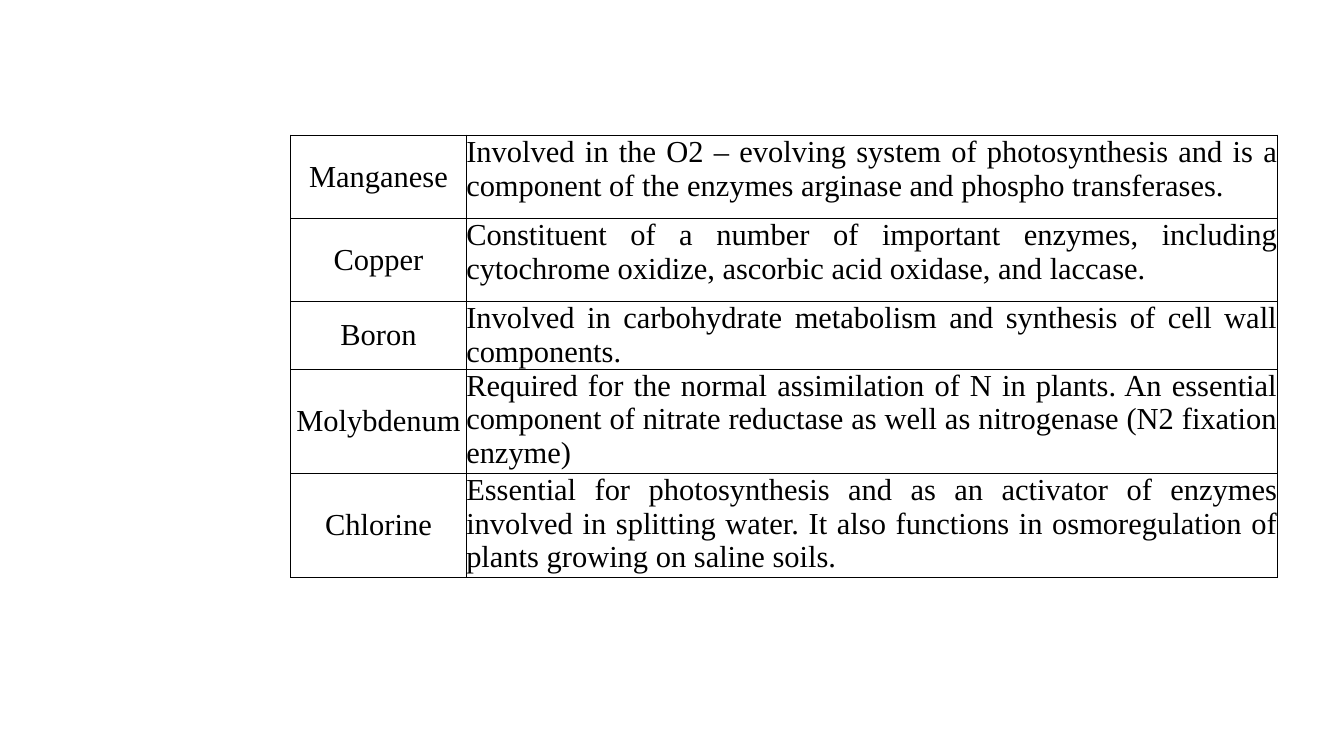
"""Build a slide with a table of micronutrients and their roles in plants."""
import pptx
import pptx.dml.color
import pptx.enum.text
import pptx.oxml
import pptx.oxml.ns
import pptx.util
from pptx.util import Inches

NUTRIENTS = [
    ("Manganese", "Involved in the O2 – evolving system of photosynthesis and is a "
     "component of the enzymes arginase and phospho transferases.", 0.91),
    ("Copper", "Constituent of a number of important enzymes, including "
     "cytochrome oxidize, ascorbic acid oxidase, and laccase.", 0.91),
    ("Boron", "Involved in carbohydrate metabolism and synthesis of cell wall "
     "components.", 0.68),
    ("Molybdenum", "Required for the normal assimilation of N in plants. An essential "
     "component of nitrate reductase as well as nitrogenase (N2 fixation enzyme)", 1.14),
    ("Chlorine", "Essential for photosynthesis and as an activator of enzymes "
     "involved in splitting water. It also functions in osmoregulation of "
     "plants growing on saline soils.", 1.14),
]
COLUMN_WIDTHS = (1.92, 8.87)
LEFT, TOP = 3.18, 1.48
INK = "000000"
FONT, FONT_SIZE = "Times New Roman", 24


def color(value):
    return pptx.dml.color.RGBColor.from_string(value)


def add_borders(cell):
    properties = cell._tc.get_or_add_tcPr()
    for position, side in enumerate(("lnL", "lnR", "lnT", "lnB")):
        border = pptx.oxml.parse_xml(
            f'<a:{side} {pptx.oxml.ns.nsdecls("a")} w="12700"><a:solidFill>'
            f'<a:srgbClr val="{INK}"/></a:solidFill></a:{side}>')
        properties.insert(position, border)


def fill_cell(cell, text, alignment, anchor):
    cell.margin_left = cell.margin_right = cell.margin_top = cell.margin_bottom = 0
    cell.vertical_anchor = anchor
    cell.fill.background()
    add_borders(cell)
    cell.text_frame.text = text
    paragraph = cell.text_frame.paragraphs[0]
    paragraph.alignment = alignment
    font = paragraph.runs[0].font
    font.name, font.size, font.bold = FONT, pptx.util.Pt(FONT_SIZE), False
    font.color.rgb = color(INK)


def main():
    presentation = pptx.Presentation()
    presentation.slide_width, presentation.slide_height = Inches(14.7), Inches(8.27)
    slide = presentation.slides.add_slide(presentation.slide_layouts[6])
    total_height = sum(height for _, _, height in NUTRIENTS)
    roles = slide.shapes.add_table(
        len(NUTRIENTS), len(COLUMN_WIDTHS), Inches(LEFT), Inches(TOP),
        Inches(sum(COLUMN_WIDTHS)), Inches(total_height)).table
    roles.first_row = roles.horz_banding = False
    for column, width in zip(roles.columns, COLUMN_WIDTHS):
        column.width = Inches(width)
    align, anchor = pptx.enum.text.PP_ALIGN, pptx.enum.text.MSO_ANCHOR
    for index, (nutrient, role, height) in enumerate(NUTRIENTS):
        roles.rows[index].height = Inches(height)
        fill_cell(roles.cell(index, 0), nutrient, align.CENTER, anchor.MIDDLE)
        fill_cell(roles.cell(index, 1), role, align.JUSTIFY, anchor.TOP)
    presentation.save("out.pptx")


if __name__ == "__main__":
    main()
